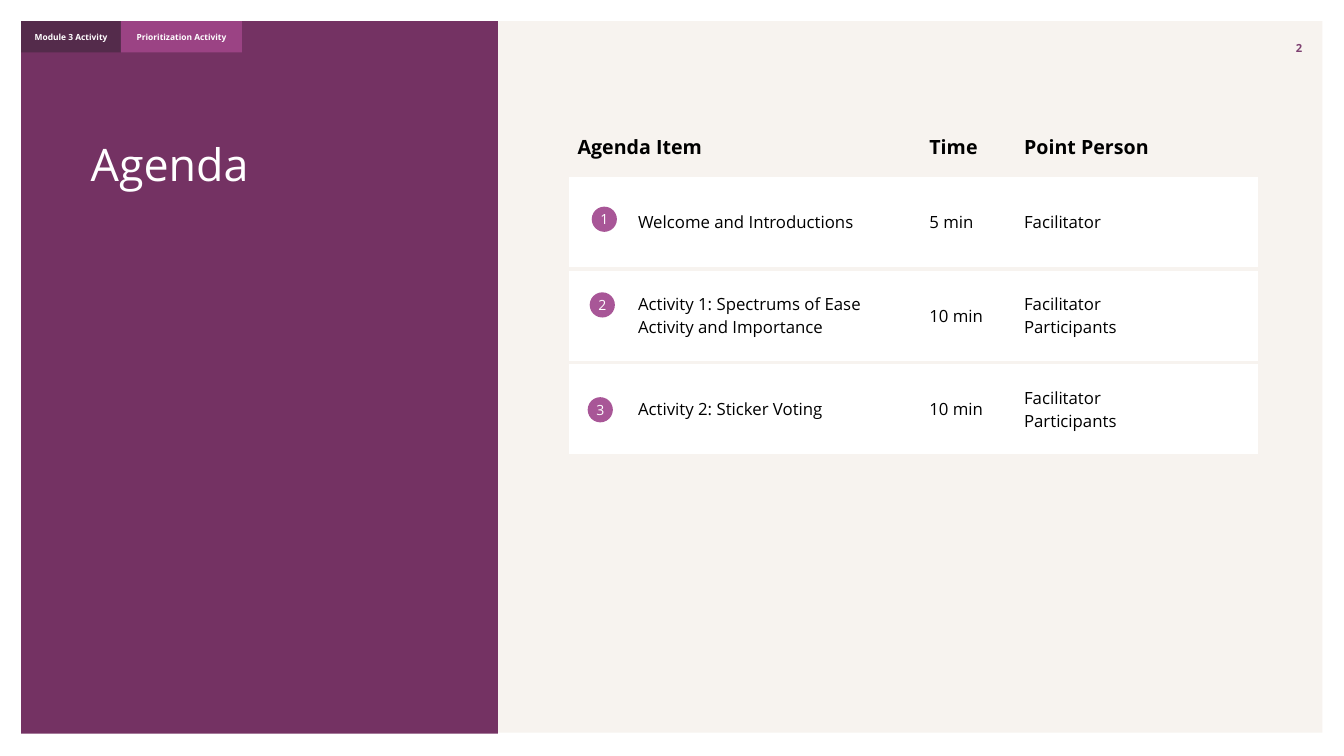
"""Builds an agenda slide on a grid of tenth-inch columns and rows."""
import dataclasses
import typing

import lxml.etree
import pptx
import pptx.dml.color
import pptx.enum.shapes
import pptx.enum.text
import pptx.oxml.ns
import pptx.util

FONT = "Open Sans"
WHITE, BLACK, CREAM = "FFFFFF", "000000", "F7F3EF"
PLUM, DARK_PLUM, ORCHID, LILAC, MAUVE = "743263", "542B4B", "9B4384", "A85697", "7E4171"
NO_STYLE = "{2D5ABB26-0587-4C30-8999-92F81FD0307C}"
COLUMNS, ROWS = 133.33, 75
SHAPE = pptx.enum.shapes.MSO_SHAPE
ALIGN = pptx.enum.text.PP_ALIGN
ANCHOR = pptx.enum.text.MSO_ANCHOR


@dataclasses.dataclass(frozen=True)
class Area:
    """A rectangle in grid columns and rows."""
    left: float
    top: float
    width: float
    height: float


@dataclasses.dataclass(frozen=True)
class Panel:
    """A filled shape with an optional label."""
    area: Area
    fill: str
    label: str = ""
    size: float = 6
    bold: bool = True
    kind: typing.Any = SHAPE.RECTANGLE


@dataclasses.dataclass(frozen=True)
class AgendaItem:
    """One agenda line, each field holding lines of text."""
    name: str
    time: str
    people: tuple[str, ...]


PANELS = [
    Panel(Area(49.4, 2.1, 81.8, 70.6), CREAM),
    Panel(Area(2.1, 2.1, 47.3, 70.7), PLUM),
    Panel(Area(2.1, 2.1, 9.9, 3.1), DARK_PLUM, "Module 3 Activity"),
    Panel(Area(12, 2.1, 12, 3.1), ORCHID, "Prioritization Activity"),
]
BADGES = [
    Panel(Area(left, top, 2.5, 2.5), LILAC, str(number), 10, False, SHAPE.OVAL)
    for number, (left, top) in enumerate([(58.7, 20.5), (58.5, 29), (58.3, 39.4)], 1)
]
HEADINGS = ("Agenda Item", "Time", "Point Person")
AGENDA = [
    AgendaItem("Welcome and Introductions", "5 min", ("Facilitator",)),
    AgendaItem("Activity 1: Spectrums of Ease \nActivity and Importance", "10 min",
               ("Facilitator", "Participants")),
    AgendaItem("Activity 2: Sticker Voting", "10 min", ("Facilitator", "Participants")),
]
TABLE_AREA = Area(56.3, 11.7, 68.7, 33.3)
TABLE_COLUMNS = (34.9, 9.4, 24.4)
HEADING_ROW, ITEM_ROW = 5.3, 9.3


def grid(steps: float) -> int:
    """Convert grid steps to a length."""
    return pptx.util.Inches(steps / 10)


def color(value: str) -> pptx.dml.color.RGBColor:
    """Convert a hex string to a colour."""
    return pptx.dml.color.RGBColor.from_string(value)


def bounds(area: Area) -> tuple[int, ...]:
    """Give left, top, width and height as lengths."""
    return tuple(grid(steps) for steps in dataclasses.astuple(area))


def set_margins(holder: typing.Any, left: float, top: float, right: float, bottom: float) -> None:
    """Set the inner margins of a text frame or a cell."""
    holder.margin_left, holder.margin_top = grid(left), grid(top)
    holder.margin_right, holder.margin_bottom = grid(right), grid(bottom)


def write(frame: typing.Any, *paragraphs: str, size: float, ink: str,
          bold: bool = False, align: typing.Any = ALIGN.LEFT) -> None:
    """Fill a text frame with formatted paragraphs."""
    for index, text in enumerate(paragraphs):
        para = frame.add_paragraph() if index else frame.paragraphs[0]
        para.alignment = align
        for number, line in enumerate(text.split("\n")):
            if number:
                para.add_line_break()
            span = para.add_run()
            span.text = line
            span.font.name, span.font.size = FONT, pptx.util.Pt(size)
            span.font.bold = bold
            span.font.color.rgb = color(ink)


def add_panel(page: typing.Any, panel: Panel) -> None:
    """Draw a filled shape and its label."""
    box = page.shapes.add_shape(panel.kind, *bounds(panel.area))
    box.shadow.inherit = False
    box.fill.solid()
    box.fill.fore_color.rgb = color(panel.fill)
    box.line.fill.background()
    if panel.label:
        frame = box.text_frame
        frame.vertical_anchor = ANCHOR.MIDDLE
        set_margins(frame, 0, 0.5, 0, 0.5)
        write(frame, panel.label, size=panel.size, ink=WHITE, bold=panel.bold, align=ALIGN.CENTER)


def add_borders(cell: typing.Any, sides: str) -> None:
    """Give the named sides of a cell a cream border."""
    properties = cell._tc.get_or_add_tcPr()
    for side in sides:
        line = lxml.etree.SubElement(properties, pptx.oxml.ns.qn(f"a:ln{side}"),
                                     w=str(pptx.util.Pt(3)))
        fill = lxml.etree.SubElement(line, pptx.oxml.ns.qn("a:solidFill"))
        lxml.etree.SubElement(fill, pptx.oxml.ns.qn("a:srgbClr"), val=CREAM)


def add_agenda(page: typing.Any) -> None:
    """Draw the agenda table."""
    holder = page.shapes.add_table(len(AGENDA) + 1, len(HEADINGS), *bounds(TABLE_AREA))
    holder._element.find(".//" + pptx.oxml.ns.qn("a:tableStyleId")).text = NO_STYLE
    table = holder.table
    table.first_row = table.horz_banding = False
    for column, width in zip(table.columns, TABLE_COLUMNS):
        column.width = grid(width)
    for index, row in enumerate(table.rows):
        row.height = grid(ITEM_ROW if index else HEADING_ROW)
    for cell, heading in zip(table.rows[0].cells, HEADINGS):
        cell.vertical_anchor = ANCHOR.MIDDLE
        set_margins(cell, 1, 1.5, 1.5, 1.5)
        write(cell.text_frame, heading, size=14, ink=BLACK, bold=True)
        add_borders(cell, "B")
    for row, item in zip(list(table.rows)[1:], AGENDA):
        texts = ((item.name,), (item.time,), item.people)
        for cell, lines, sides, indent in zip(row.cells, texts, ("LTB", "TB", "RTB"), (7, 1, 1)):
            cell.vertical_anchor = ANCHOR.MIDDLE
            set_margins(cell, indent, 0.5, 1, 0.5)
            write(cell.text_frame, *lines, size=12, ink=BLACK)
            add_borders(cell, sides)
            cell.fill.solid()
            cell.fill.fore_color.rgb = color(WHITE)


def place_title(page: typing.Any) -> None:
    """Move the title in front of the panels and format it."""
    title = page.shapes.title
    title.left, title.top, title.width, title.height = bounds(Area(8, 13.1, 43.9, 18.8))
    frame = title.text_frame
    frame.auto_size = pptx.enum.text.MSO_AUTO_SIZE.NONE
    frame.vertical_anchor = ANCHOR.TOP
    write(frame, "Agenda", size=32, ink=WHITE)
    title._element.getparent().append(title._element)


def add_page_number(page: typing.Any) -> None:
    """Write the page number in the top right corner."""
    frame = page.shapes.add_textbox(*bounds(Area(122.5, 2.1, 8.7, 3.3))).text_frame
    frame.word_wrap = True
    frame.vertical_anchor = ANCHOR.BOTTOM
    set_margins(frame, 1, 0, 2, 0)
    write(frame, "2", size=8, ink=MAUVE, bold=True, align=ALIGN.RIGHT)


def main() -> None:
    """Build and save the deck."""
    deck = pptx.Presentation()
    deck.slide_width, deck.slide_height = grid(COLUMNS), grid(ROWS)
    page = deck.slides.add_slide(deck.slide_layouts.get_by_name("Title Only"))
    for panel in PANELS:
        add_panel(page, panel)
    add_agenda(page)
    place_title(page)
    for badge in BADGES:
        add_panel(page, badge)
    add_page_number(page)
    deck.save("out.pptx")


if __name__ == "__main__":
    main()
